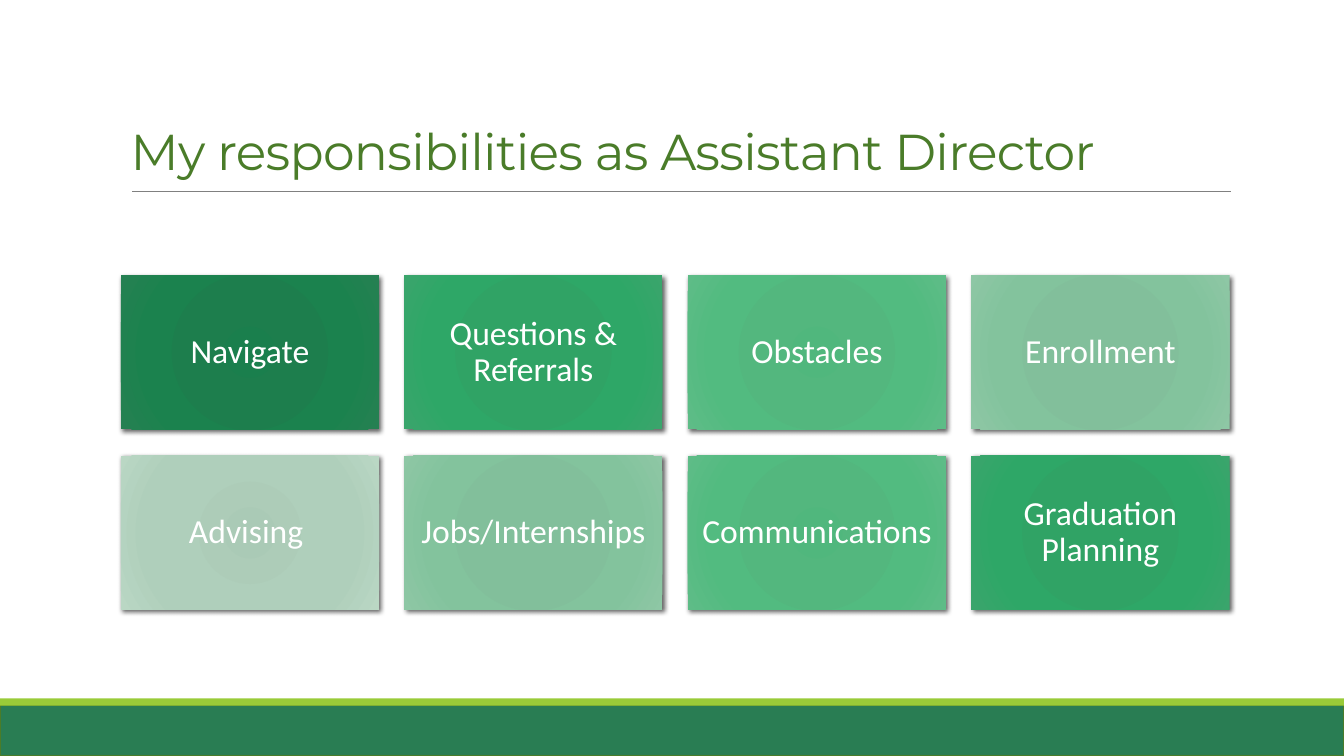
from pptx import Presentation
from pptx.dml.color import RGBColor
from pptx.enum.shapes import MSO_CONNECTOR, MSO_SHAPE
from pptx.enum.text import MSO_ANCHOR, PP_ALIGN
from pptx.oxml import parse_xml
from pptx.oxml.ns import nsdecls, qn
from pptx.util import Pt

PX = 9525  # EMU per px
PAGE_WIDTH, PAGE_HEIGHT = 1280, 720

WHITE = RGBColor(0xFF, 0xFF, 0xFF)
GRAY = RGBColor(0x80, 0x80, 0x80)
TITLE_GREEN = RGBColor(0x4A, 0x7C, 0x29)
FOOTER_GREEN = RGBColor(0x29, 0x7D, 0x53)
LIME = RGBColor(0x99, 0xCB, 0x38)

# Gradient colours from the centre of a card to its corners
STOPS = (0, 34, 70, 100)
DARK = [RGBColor.from_string(c) for c in ("1A7F4D", "1D7E4D", "1B824E", "258052")]
STRONG = [RGBColor.from_string(c) for c in ("2DA364", "30A365", "2EA767", "3AA56C")]
MEDIUM = [RGBColor.from_string(c) for c in ("50B77D", "53B77E", "52BB80", "5EBC87")]
SOFT = [RGBColor.from_string(c) for c in ("80BE99", "82BF9B", "83C39D", "8EC7A5")]
PALE = [RGBColor.from_string(c) for c in ("AACAB6", "ADCCB8", "AFCFBB", "BAD7C4")]

CARDS = [
    ("Navigate", DARK), ("Questions & Referrals", STRONG),
    ("Obstacles", MEDIUM), ("Enrollment", SOFT),
    ("Advising ", PALE), ("Jobs/Internships", SOFT),
    ("Communications", MEDIUM), ("Graduation Planning", STRONG),
]
COLUMNS = 4
CARD_WIDTH, CARD_HEIGHT = 246, 147

TITLE_FONT = {"name": "Montserrat", "size": Pt(36)}
CARD_FONT = {"name": "Calibri", "size": Pt(24)}


def scaled(*lengths):
    return [length * PX for length in lengths]


def write(box, text, font, color, frame_format, para_format):
    """Put one formatted paragraph into a box and return its run."""
    frame = box.text_frame
    for name, value in frame_format.items():
        setattr(frame, name, value)
    para = frame.paragraphs[0]
    for name, value in para_format.items():
        setattr(para, name, value)
    span = para.add_run()
    span.text = text
    for name, value in font.items():
        setattr(span.font, name, value)
    span.font.color.rgb = color
    return span


def add_rectangle(page, left, top, width, height):
    box = page.shapes.add_shape(MSO_SHAPE.RECTANGLE, *scaled(left, top, width, height))
    box.shadow.inherit = False
    box.line.fill.background()
    return box


def add_footer(page, left, top, width, height):
    stripe_height = 7
    band_top = top + stripe_height
    band = add_rectangle(page, left, band_top, width, height - stripe_height)
    band.line.color.rgb = TITLE_GREEN
    band.line.width = Pt(1.25)
    stripe = add_rectangle(page, left, top, width, stripe_height)
    for box, color in ((band, FOOTER_GREEN), (stripe, LIME)):
        box.fill.solid()
        box.fill.fore_color.rgb = color


def add_title(page, left, top, width, height):
    # Rule under the title
    rule_top = top + height + 5
    rule = page.shapes.add_connector(
        MSO_CONNECTOR.STRAIGHT, *scaled(left + 11, rule_top, left + 1057, rule_top))
    rule.line.color.rgb = GRAY
    rule.line.width = Pt(0.5)
    rule.element.spPr.append(parse_xml(f"<a:effectLst {nsdecls('a')}/>"))

    # Title text
    box = page.shapes.add_textbox(*scaled(left, top, width, height))
    span = write(box, "My responsibilities as Assistant Director", TITLE_FONT, TITLE_GREEN,
                 {"word_wrap": True, "vertical_anchor": MSO_ANCHOR.BOTTOM},
                 {"line_spacing": 0.85})
    span.font.language_id = None
    span.font._element.set("spc", "-50")


def add_card(page, left, top, text, colors):
    card = add_rectangle(page, left, top, CARD_WIDTH, CARD_HEIGHT)
    properties = card.element.spPr

    # Radial gradient
    stops = "".join(
        f'<a:gs pos="{stop * 1000}"><a:srgbClr val="{color}"/></a:gs>'
        for stop, color in zip(STOPS, colors))
    card.fill.background()
    properties.replace(properties.find(qn("a:noFill")), parse_xml(
        f'<a:gradFill {nsdecls("a")} rotWithShape="1"><a:gsLst>{stops}</a:gsLst>'
        '<a:path path="circle"><a:fillToRect l="100000" t="100000" r="100000" b="100000"/>'
        '</a:path></a:gradFill>'))

    # Soft shadow to the lower right
    properties.find(qn("a:effectLst")).append(parse_xml(
        f'<a:outerShdw {nsdecls("a")} blurRad="{Pt(3.5)}" dist="{Pt(2)}" dir="2700000" '
        'algn="tl" rotWithShape="0"><a:srgbClr val="000000"><a:alpha val="60000"/>'
        '</a:srgbClr></a:outerShdw>'))

    margins = {f"margin_{side}": 10 * PX for side in ("left", "top", "right", "bottom")}
    write(card, text, CARD_FONT, WHITE,
          {"word_wrap": True, "vertical_anchor": MSO_ANCHOR.MIDDLE, **margins},
          {"alignment": PP_ALIGN.CENTER, "line_spacing": 0.9})


def add_card_grid(page, left, top, width, height):
    column_step = (width - CARD_WIDTH) // (COLUMNS - 1)
    row_step = height - CARD_HEIGHT
    for index, (text, colors) in enumerate(CARDS):
        row, column = divmod(index, COLUMNS)
        add_card(page, left + column * column_step, top + row * row_step, text, colors)


def main():
    deck = Presentation()
    deck.slide_width, deck.slide_height = scaled(PAGE_WIDTH, PAGE_HEIGHT)
    page = deck.slides.add_slide(deck.slide_layouts[6])
    add_footer(page, 0, 665, PAGE_WIDTH, 55)
    add_title(page, 115, 30, 1068, 147)
    add_card_grid(page, 115, 262, 1056, 319)
    deck.save("out.pptx")


if __name__ == "__main__":
    main()
